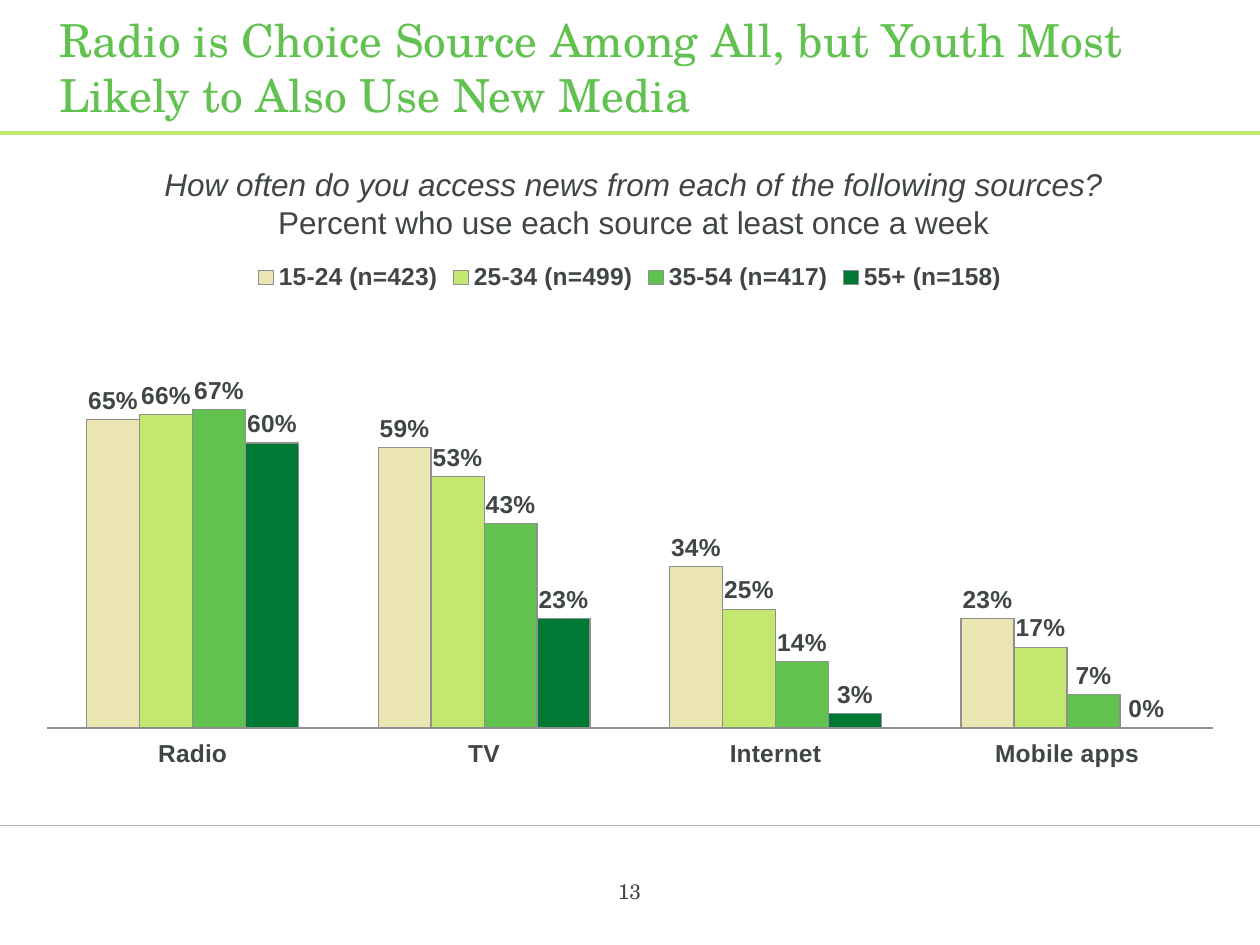
from dataclasses import dataclass

from lxml import etree
from pptx import Presentation
from pptx.chart.data import CategoryChartData
from pptx.dml.color import RGBColor
from pptx.enum.chart import (XL_CHART_TYPE, XL_LABEL_POSITION,
                             XL_LEGEND_POSITION, XL_TICK_LABEL_POSITION,
                             XL_TICK_MARK)
from pptx.enum.shapes import MSO_CONNECTOR
from pptx.enum.text import MSO_ANCHOR, MSO_AUTO_SIZE, PP_ALIGN
from pptx.oxml import parse_xml
from pptx.oxml.ns import nsdecls, qn
from pptx.util import Cm, Pt

COLUMNS = XL_CHART_TYPE.COLUMN_CLUSTERED
OUTSIDE_END = XL_LABEL_POSITION.OUTSIDE_END
LEGEND_TOP = XL_LEGEND_POSITION.TOP
NO_TICK = XL_TICK_MARK.NONE
LABELS_LOW = XL_TICK_LABEL_POSITION.LOW
STRAIGHT = MSO_CONNECTOR.STRAIGHT
CENTER, LEFT = PP_ALIGN.CENTER, PP_ALIGN.LEFT
TOP, MIDDLE = MSO_ANCHOR.TOP, MSO_ANCHOR.MIDDLE

SERIF, SANS = "TeX Gyre Schola", "Arial"
INK, GREEN, LIME, GRAY = "404545", "61C250", "C3E76F", "8E908F"
SLIDE_WIDTH, SLIDE_HEIGHT = Cm(25.4), Cm(19.05)


@dataclass(frozen=True)
class Rule:
    y: float
    color: str
    weight: float


@dataclass(frozen=True)
class AgeGroup:
    name: str
    shares: tuple[float, ...]
    color: str


RULES = (Rule(16.64, "B5B6B3", 0.25), Rule(2.69, LIME, 2.25))
SOURCES = ("Radio", "TV", "Internet", "Mobile apps")
AGE_GROUPS = (
    AgeGroup("15-24 (n=423)", (0.65, 0.59, 0.34, 0.23), "EBE6B1"),
    AgeGroup("25-34 (n=499)", (0.66, 0.53, 0.25, 0.17), LIME),
    AgeGroup("35-54 (n=417)", (0.67, 0.43, 0.14, 0.07), GREEN),
    AgeGroup("55+ (n=158)", (0.6, 0.23, 0.03, 0), "007934"),
)


def rgb(color: str) -> RGBColor:
    return RGBColor.from_string(color)


def style_font(font, name: str, size: float, color: str, bold=None) -> None:
    font.name, font.size, font.bold = name, Pt(size), bold
    font.color.rgb = rgb(color)


def style_line(line, color: str, weight: float) -> None:
    line.color.rgb = rgb(color)
    line.width = Pt(weight)


def place(shape, left: float, top: float, width: float, height: float) -> None:
    """Set the position and size of a shape, in centimetres."""
    shape.left, shape.top = Cm(left), Cm(top)
    shape.width, shape.height = Cm(width), Cm(height)


def format_frame(frame, align, anchor):
    """Set wrapping and alignment, and return the first paragraph."""
    frame.word_wrap = True
    frame.auto_size = MSO_AUTO_SIZE.NONE
    frame.vertical_anchor = anchor
    paragraph = frame.paragraphs[0]
    paragraph.alignment = align
    return paragraph


def add_rule(slide, rule: Rule) -> None:
    connector = slide.shapes.add_connector(
        STRAIGHT, 0, Cm(rule.y), SLIDE_WIDTH, Cm(rule.y))
    style_line(connector.line, rule.color, rule.weight)
    properties = connector.element.find(qn("p:spPr"))
    etree.SubElement(properties, qn("a:effectLst"))


def add_title(slide, text: str) -> None:
    title = slide.shapes.title
    place(title, 0.94, 0.53, 23.77, 1.63)
    title.text_frame.text = text
    paragraph = format_frame(title.text_frame, LEFT, MIDDLE)
    style_font(paragraph.font, SERIF, 26, GREEN)


def add_question(slide, question: str, measure: str) -> None:
    box = slide.shapes.add_textbox(Cm(0.94), Cm(3.2), Cm(23.67), Cm(3))
    paragraph = format_frame(box.text_frame, CENTER, TOP)
    asked = paragraph.add_run()
    asked.text = question
    asked.font.italic = True
    paragraph.add_line_break()
    paragraph.add_run().text = measure
    style_font(paragraph.font, SANS, 18, INK)


def add_page_number(slide, number: str) -> None:
    box = slide.shapes.add_textbox(Cm(9.73), Cm(17.58), Cm(5.92), Cm(1.32))
    paragraph = format_frame(box.text_frame, CENTER, TOP)
    paragraph.text = number
    style_font(paragraph.font, SERIF, 12, INK)


def fix_plot_area(chart, x: float, y: float, w: float, h: float) -> None:
    """Pin the inner plot area, in fractions of the chart."""
    plot_area = chart.element.find(".//" + qn("c:plotArea"))
    for automatic in plot_area.findall(qn("c:layout")):
        plot_area.remove(automatic)
    sizes = "".join(f'<c:{tag} val="{value}"/>' for tag, value in
                    (("x", x), ("y", y), ("w", w), ("h", h)))
    plot_area.insert(0, parse_xml(
        f'<c:layout {nsdecls("c")}><c:manualLayout>'
        '<c:layoutTarget val="inner"/>'
        f'<c:xMode val="edge"/><c:yMode val="edge"/>{sizes}'
        '</c:manualLayout></c:layout>'))


def format_series(series, group: AgeGroup) -> None:
    series.format.fill.solid()
    series.format.fill.fore_color.rgb = rgb(group.color)
    style_line(series.format.line, GRAY, 0.75)
    labels = series.data_labels
    labels.show_value = True
    labels.number_format, labels.number_format_is_linked = "0%", False
    labels.position = OUTSIDE_END
    style_font(labels.font, SANS, 14, INK, True)


def add_usage_chart(slide) -> None:
    usage = CategoryChartData(number_format="0%")
    usage.categories = SOURCES
    for group in AGE_GROUPS:
        usage.add_series(group.name, group.shares)
    chart = slide.shapes.add_chart(
        COLUMNS, Cm(0.56), Cm(5.03), Cm(24.28), Cm(10.9), usage).chart
    chart.has_title = False
    style_font(chart.font, SERIF, 14, INK, True)

    chart.has_legend = True
    chart.legend.position = LEGEND_TOP
    chart.legend.include_in_layout = False
    style_font(chart.legend.font, SANS, 14, INK, True)

    sources = chart.category_axis
    sources.major_tick_mark = sources.minor_tick_mark = NO_TICK
    sources.tick_label_position = LABELS_LOW
    style_line(sources.format.line, GRAY, 0.75)
    style_font(sources.tick_labels.font, SANS, 14, INK, True)

    shares = chart.value_axis
    shares.minimum_scale, shares.maximum_scale = 0, 1
    shares.major_unit = 0.2
    shares.has_major_gridlines = False
    shares.visible = False

    plot = chart.plots[0]
    plot.gap_width, plot.overlap = 150, 0
    plot.vary_by_categories = False
    for series, group in zip(plot.series, AGE_GROUPS):
        format_series(series, group)
    fix_plot_area(chart, 0.016, 0.007, 0.968, 0.878)


def main() -> None:
    deck = Presentation()
    deck.slide_width, deck.slide_height = SLIDE_WIDTH, SLIDE_HEIGHT
    slide = deck.slides.add_slide(deck.slide_layouts.get_by_name("Title Only"))
    for rule in RULES:
        add_rule(slide, rule)
    add_title(slide, "Radio is Choice Source Among All, but Youth Most "
                     "Likely to Also Use New Media")
    add_question(
        slide, "How often do you access news from each of the following sources?",
        "Percent who use each source at least once a week")
    add_page_number(slide, "13")
    add_usage_chart(slide)
    deck.save("out.pptx")


if __name__ == "__main__":
    main()
